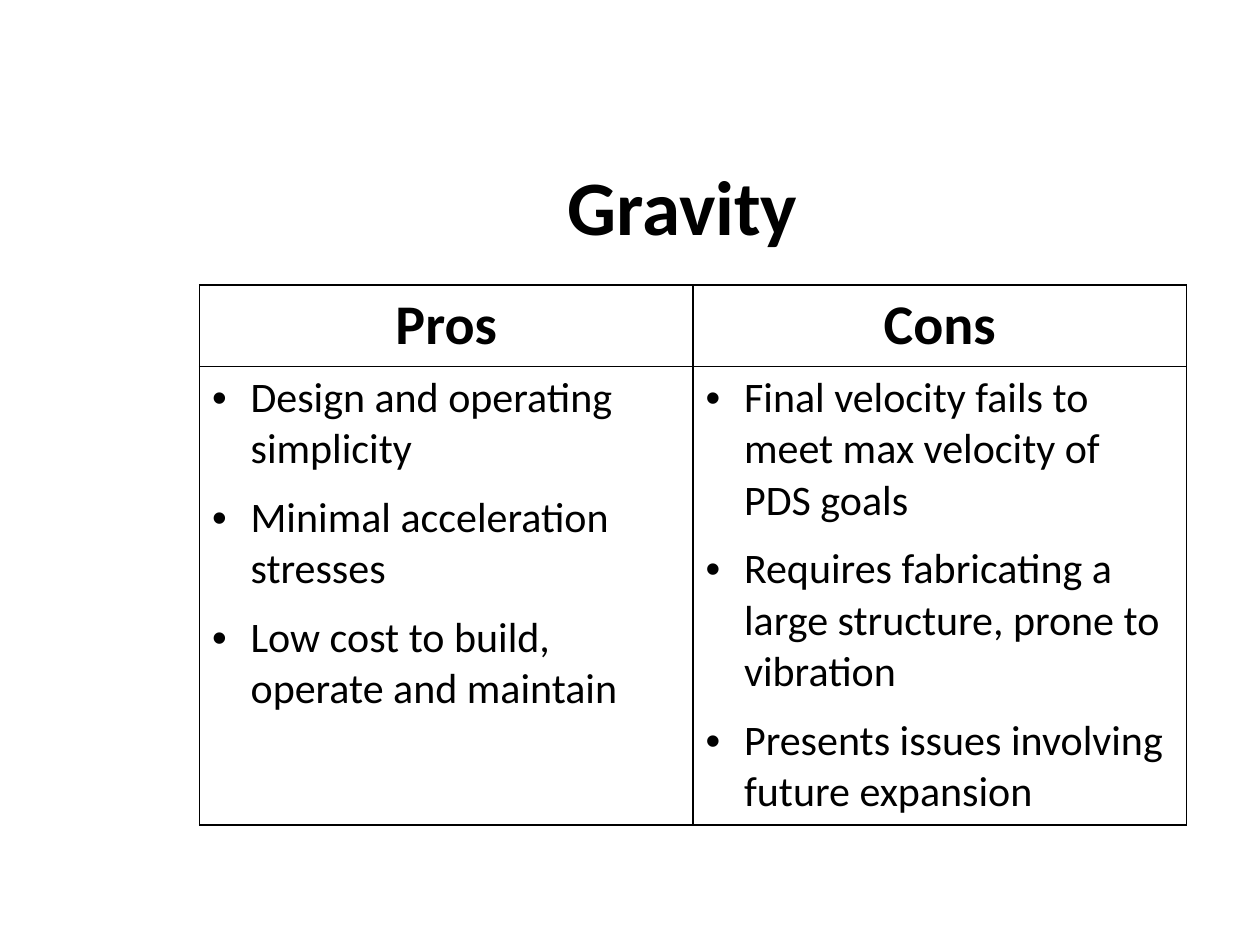
from lxml import etree
from pptx import Presentation
from pptx import util as u
from pptx.dml import color
from pptx.enum import text
from pptx.oxml import ns

COLORS = {"ink": "000000"}
FONT = "Calibri"
INDENT = u.Pt(22)

columns = {
    "Pros": [
        "Design and operating\nsimplicity",
        "Minimal acceleration\nstresses",
        "Low cost to build,\noperate and maintain",
    ],
    "Cons": [
        "Final velocity fails to\nmeet max velocity of\nPDS goals",
        "Requires fabricating a\nlarge structure, prone to\nvibration",
        "Presents issues involving\nfuture expansion",
    ],
}


def style_runs(paragraph, size, bold):
    for run in paragraph.runs:
        run.font.name = FONT
        run.font.size = u.Pt(size)
        run.font.bold = bold
        run.font.color.rgb = color.RGBColor.from_string(COLORS["ink"])


def outline(cell):
    props = cell._tc.get_or_add_tcPr()
    for side in ("lnL", "lnR", "lnT", "lnB"):
        edge = etree.SubElement(props, ns.qn(f"a:{side}"), w=str(u.Pt(1)))
        paint = etree.SubElement(edge, ns.qn("a:solidFill"))
        etree.SubElement(paint, ns.qn("a:srgbClr"), val=COLORS["ink"])
    cell.fill.background()


prs = Presentation()
prs.slide_width, prs.slide_height = u.Pt(720), u.Pt(540)
slide = prs.slides.add_slide(prs.slide_layouts[5])

title = slide.shapes.title
title.left, title.top, title.width, title.height = u.Pt(66), u.Pt(72), u.Pt(648), u.Pt(90)
title.text_frame.text = "Gravity"
title.text_frame.vertical_anchor = text.MSO_ANCHOR.MIDDLE
heading = title.text_frame.paragraphs[0]
heading.alignment = text.PP_ALIGN.CENTER
style_runs(heading, 44, True)

comparison = slide.shapes.add_table(2, 2, u.Pt(114), u.Pt(163), u.Pt(564), u.Pt(308)).table
comparison.first_row = False
comparison.horz_banding = False
comparison.rows[0].height = u.Pt(46)
comparison.rows[1].height = u.Pt(262)

for col, (label, points) in enumerate(columns.items()):
    comparison.columns[col].width = u.Pt(282)
    header, body = comparison.cell(0, col), comparison.cell(1, col)
    outline(header)
    outline(body)

    header.text_frame.text = label
    header_line = header.text_frame.paragraphs[0]
    header_line.alignment = text.PP_ALIGN.CENTER
    style_runs(header_line, 32, True)

    for i, point in enumerate(points):
        item = body.text_frame.paragraphs[0] if i == 0 else body.text_frame.add_paragraph()
        item.text = point.replace("\n", "\v")
        item.space_after = u.Pt(10)
        props = item._p.get_or_add_pPr()
        props.set("marL", str(INDENT))
        props.set("indent", str(-INDENT))
        etree.SubElement(props, ns.qn("a:buFont"), typeface="Arial")
        etree.SubElement(props, ns.qn("a:buChar"), char="•")
        style_runs(item, 24, False)

prs.save("out.pptx")
